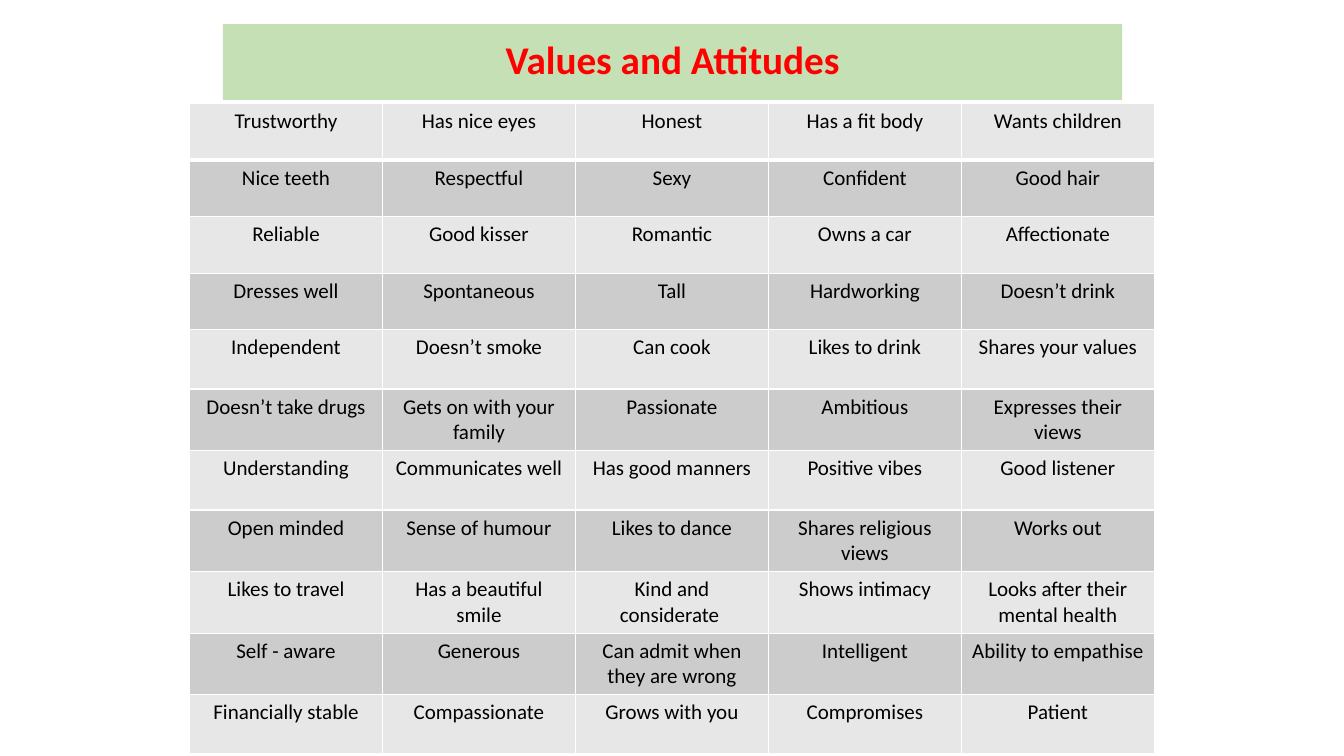
from pptx import Presentation
from pptx.dml.color import RGBColor
from pptx.enum.text import MSO_ANCHOR, PP_ALIGN
from pptx.oxml import parse_xml
from pptx.oxml.ns import nsdecls
from pptx.util import Inches, Pt

BLACK = RGBColor(0x00, 0x00, 0x00)
WHITE = RGBColor(0xFF, 0xFF, 0xFF)
RED = RGBColor(0xFF, 0x00, 0x00)
GREEN = RGBColor(0xC5, 0xE0, 0xB4)
BANDS = (RGBColor(0xE7, 0xE7, 0xE7), RGBColor(0xCC, 0xCC, 0xCC))

TRAITS = (
    ("Trustworthy", "Has nice eyes", "Honest", "Has a fit body", "Wants children"),
    ("Nice teeth", "Respectful", "Sexy", "Confident", "Good hair"),
    ("Reliable", "Good kisser", "Romantic", "Owns a car", "Affectionate"),
    ("Dresses well", "Spontaneous", "Tall", "Hardworking", "Doesn’t drink"),
    ("Independent", "Doesn’t smoke", "Can cook", "Likes to drink", "Shares your values"),
    ("Doesn’t take drugs", "Gets on with your family", "Passionate", "Ambitious",
     "Expresses their views"),
    ("Understanding", "Communicates well", "Has good manners", "Positive vibes",
     "Good listener"),
    ("Open minded", "Sense of humour", "Likes to dance", "Shares religious views",
     "Works out"),
    ("Likes to travel", "Has a beautiful smile", "Kind and considerate ",
     "Shows intimacy", "Looks after their mental health"),
    ("Self - aware", "Generous", "Can admit when they are wrong", "Intelligent",
     "Ability to empathise"),
    ("Financially stable", "Compassionate", "Grows with you", "Compromises", "Patient"),
)
ROW_HEIGHTS = [0.56] * 4 + [0.59] * 7


class ValuesSlide:
    """Title-only slide laid out on a grid of 13.33 columns by 7.5 rows."""

    FONT = "Calibri"
    COLUMNS, ROWS = 13.33, 7.5

    def __init__(self, deck):
        self.column = deck.slide_width / self.COLUMNS
        self.row = deck.slide_height / self.ROWS
        self.slide = deck.slides.add_slide(deck.slide_layouts[5])

    def place(self, left, top, width, height):
        """Turn grid units into slide lengths."""
        return (round(left * self.column), round(top * self.row),
                round(width * self.column), round(height * self.row))

    def caption(self, frame, wording, size, color, bold=False):
        """Set one centred paragraph."""
        frame.text = wording
        paragraph = frame.paragraphs[0]
        paragraph.alignment = PP_ALIGN.CENTER
        paragraph.font.name = self.FONT
        paragraph.font.size = Pt(size)
        paragraph.font.bold = bold
        paragraph.font.color.rgb = color
        return paragraph

    def title(self, wording, *box):
        """Fill the title placeholder as a banner."""
        banner = self.slide.shapes.title
        banner.left, banner.top, banner.width, banner.height = self.place(*box)
        banner.fill.solid()
        banner.fill.fore_color.rgb = GREEN
        banner.text_frame.vertical_anchor = MSO_ANCHOR.MIDDLE
        self.caption(banner.text_frame, wording, 28, RED, bold=True).line_spacing = 0.9

    def border(self, cell, bottom):
        """Rule a cell in white, with its own bottom width in points."""
        properties = cell._tc.get_or_add_tcPr()
        widths = {"lnL": 1, "lnR": 1, "lnT": 1, "lnB": bottom}
        for position, (edge, width) in enumerate(widths.items()):
            properties.insert(position, parse_xml(
                f'<a:{edge} {nsdecls("a")} w="{Pt(width)}"><a:solidFill>'
                f'<a:srgbClr val="{WHITE}"/></a:solidFill></a:{edge}>'))

    def table(self, entries, heights, *box):
        """Draw a banded table with equal columns."""
        grid = self.slide.shapes.add_table(
            len(entries), len(entries[0]), *self.place(*box)).table
        grid.first_row = False
        for index, (traits, height) in enumerate(zip(entries, heights)):
            grid.rows[index].height = round(height * self.row)
            for cell, trait in zip(grid.rows[index].cells, traits):
                self.caption(cell.text_frame, trait, 15, BLACK)
                cell.fill.solid()
                cell.fill.fore_color.rgb = BANDS[index % 2]
                self.border(cell, bottom=1 if index else 3)


def main():
    """Build and save the slide."""
    deck = Presentation()
    deck.slide_width, deck.slide_height = Inches(13.33), Inches(7.5)
    values = ValuesSlide(deck)
    values.title("Values and Attitudes", 2.21, 0.24, 8.92, 0.75)
    values.table(TRAITS, ROW_HEIGHTS, 1.88, 1.03, 9.57, sum(ROW_HEIGHTS))
    deck.save("out.pptx")


if __name__ == "__main__":
    main()
